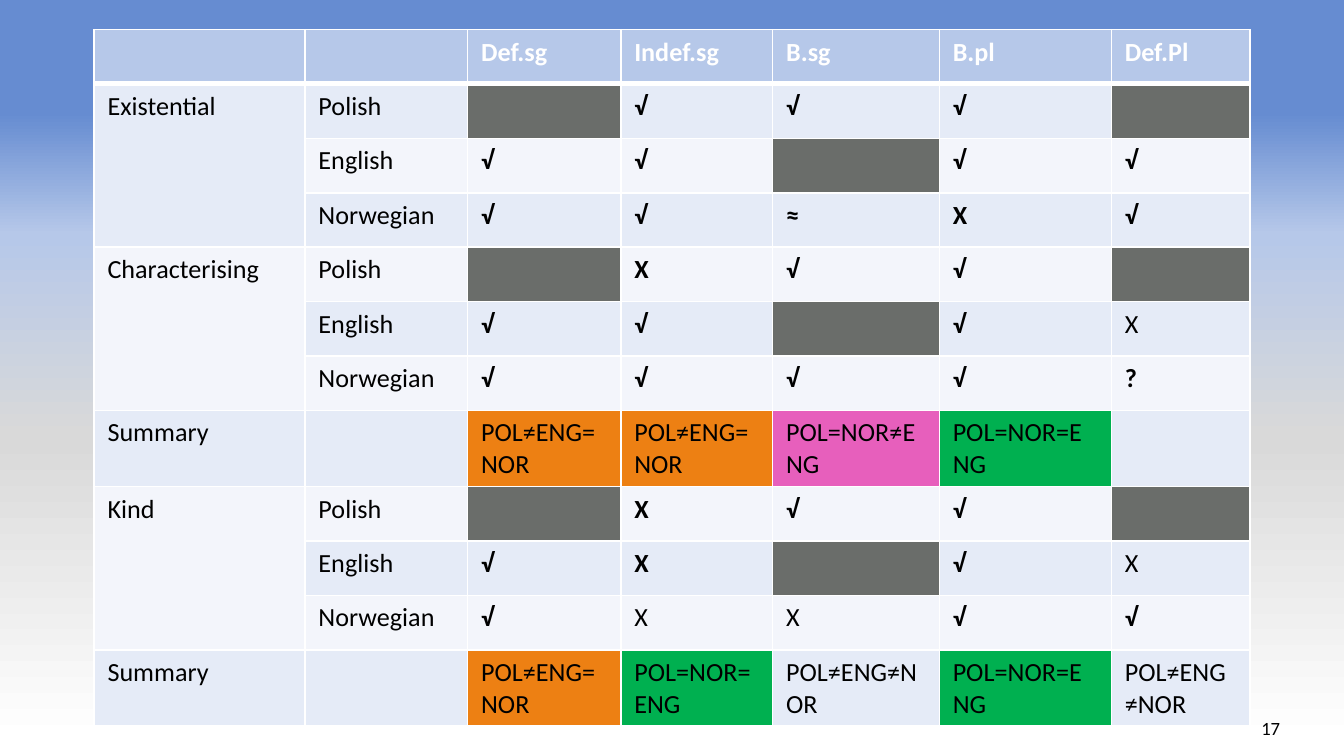
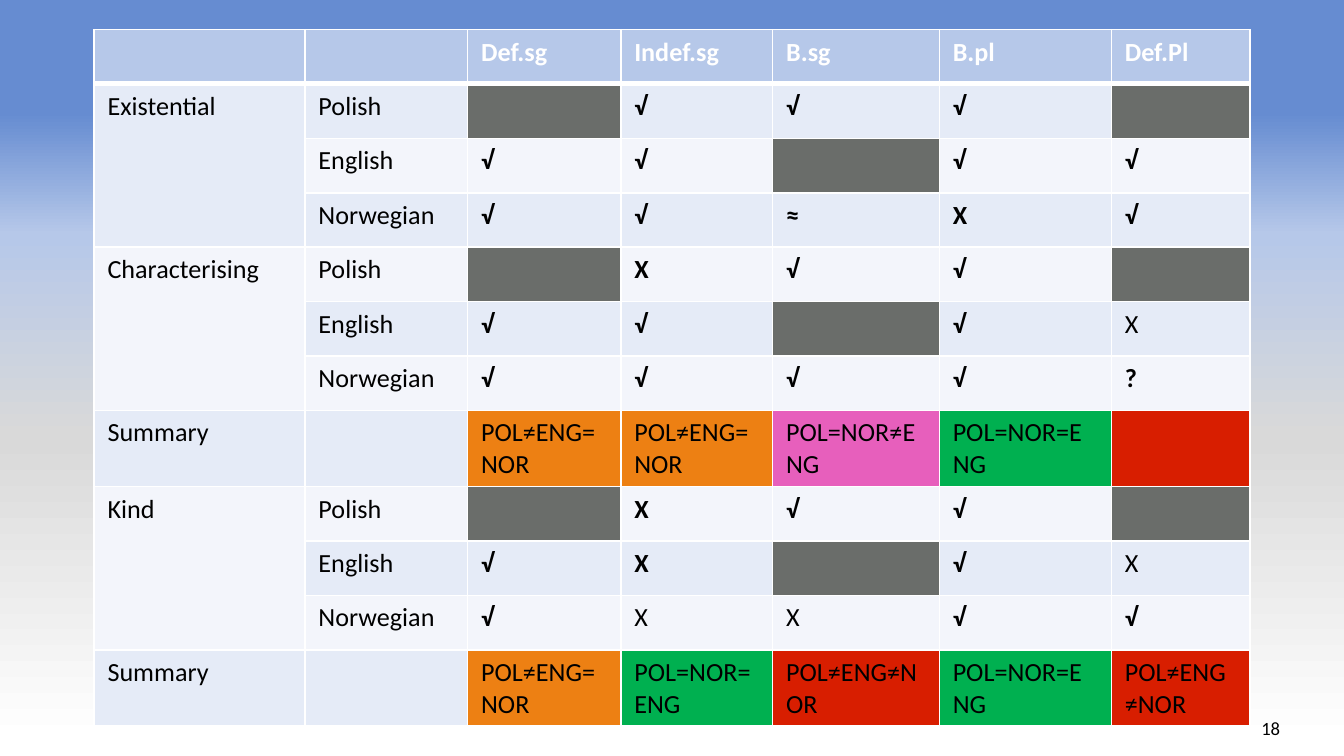
"""Builds two slides comparing noun phrase readings in Polish, English and Norwegian."""
import dataclasses

import lxml.etree
import pptx
import pptx.dml.color
import pptx.enum.text
import pptx.oxml.ns
import pptx.util

PX = pptx.util.Inches(1) // 200
qn = pptx.oxml.ns.qn


@dataclasses.dataclass(frozen=True)
class Theme:
    font: str = "Calibri"
    table_size: int = 14
    number_size: int = 10
    ink: str = "000000"
    white: str = "FFFFFF"
    header: str = "B6C8E9"
    bands: tuple = ("F3F5FB", "E5EBF7")
    blocked: str = "6A6D6A"
    orange: str = "ED8013"
    pink: str = "E75FBC"
    green: str = "00B050"
    red: str = "D81E00"
    backdrop: tuple = ((2, "FFFFFF"), (42, "D9D9D9"), (69, "B6C8E9"), (85, "668CD1"))
    thin: int = 1
    thick: int = 3


THEME = Theme()
BLOCKED = "-"
PLAIN_X = "x"
ALL_DIFFER = "POL≠ENG≠NOR"
VERDICT_FILLS = {
    "POL≠ENG=NOR": THEME.orange,
    "POL=NOR≠ENG": THEME.pink,
    "POL=NOR=ENG": THEME.green,
}
CONTRAST_FILLS = {ALL_DIFFER: THEME.red, "": THEME.red}
COLUMN_WIDTHS = (314, 242, 228, 226, 248, 256, 206)
ROW_HEIGHT = 81
HEADER = ("", "", "Def.sg", "Indef.sg", "B.sg", "B.pl", "Def.Pl")
LANGUAGES = ("Polish", "English", "Norwegian")
READINGS = (
    ("Existential", ("-√√√-", "√√-√√", "√√≈X√"), None),
    ("Characterising", ("-X√√-", "√√-√x", "√√√√?"),
     ("POL≠ENG=NOR", "POL≠ENG=NOR", "POL=NOR≠ENG", "POL=NOR=ENG", "")),
    ("Kind", ("-X√√-", "√X-√x", "√xx√√"),
     ("POL≠ENG=NOR", "POL=NOR=ENG", ALL_DIFFER, "POL=NOR=ENG", ALL_DIFFER)),
)


class SlideBuilder:
    def __init__(self, deck, theme):
        self.deck = deck
        self.theme = theme
        self.slide = None

    def add_slide(self):
        self.slide = self.deck.slides.add_slide(self.deck.slide_layouts[6])
        fill = self.slide.background.fill
        fill.gradient()
        fill.gradient_angle = 90
        stops = next(self.slide.element.iter(qn("a:gsLst")))
        for stop in list(stops):
            stops.remove(stop)
        for percent, color in self.theme.backdrop:
            stop = lxml.etree.SubElement(stops, qn("a:gs"), pos=str(percent * 1000))
            lxml.etree.SubElement(stop, qn("a:srgbClr"), val=color)

    def add_span(self, para, text, size, color, bold=False):
        span = para.add_run()
        span.text = text
        span.font.name = self.theme.font
        span.font.size = pptx.util.Pt(size)
        span.font.bold = bold
        span.font.color.rgb = pptx.dml.color.RGBColor.from_string(color)

    def page_number(self, number):
        box = self.slide.shapes.add_textbox(1854 * PX, 1054 * PX, 74 * PX, 60 * PX)
        frame = box.text_frame
        frame.word_wrap = True
        frame.margin_left = frame.margin_right = 0
        frame.vertical_anchor = pptx.enum.text.MSO_ANCHOR.MIDDLE
        para = frame.paragraphs[0]
        para.alignment = pptx.enum.text.PP_ALIGN.CENTER
        self.add_span(para, str(number), self.theme.number_size, self.theme.ink)

    def cell(self, cell, text, fill, color, bold=False, top=THEME.thin, bottom=THEME.thin):
        properties = cell._tc.get_or_add_tcPr()
        widths = {"L": self.theme.thin, "R": self.theme.thin, "T": top, "B": bottom}
        for side, width in widths.items():
            line = lxml.etree.SubElement(
                properties, qn(f"a:ln{side}"), w=str(pptx.util.Pt(width)))
            solid = lxml.etree.SubElement(line, qn("a:solidFill"))
            lxml.etree.SubElement(solid, qn("a:srgbClr"), val=self.theme.white)
        cell.fill.solid()
        cell.fill.fore_color.rgb = pptx.dml.color.RGBColor.from_string(fill)
        if text:
            para = cell.text_frame.paragraphs[0]
            self.add_span(para, text, self.theme.table_size, color, bold)

    def comparison(self, verdict_fills):
        row_count = 1 + sum(
            len(marks) + (verdicts is not None) for _, marks, verdicts in READINGS)
        frame = self.slide.shapes.add_table(
            row_count, len(HEADER), 140 * PX, 44 * PX, sum(COLUMN_WIDTHS) * PX,
            row_count * ROW_HEIGHT * PX)
        table = frame.table
        table.first_row = table.horz_banding = False
        for column, width in zip(table.columns, COLUMN_WIDTHS):
            column.width = width * PX
        for index, title in enumerate(HEADER):
            self.cell(table.cell(0, index), title, self.theme.header, self.theme.white,
                      bold=True, bottom=self.theme.thick)
        row = 1
        for reading, marks, verdicts in READINGS:
            last = row + len(marks) - 1
            for offset, (language, line) in enumerate(zip(LANGUAGES, marks)):
                self.marks_row(table, row + offset, reading if offset == 0 else "",
                               language, line)
            table.cell(row, 0).merge(table.cell(last, 0))
            row = last + 1
            if verdicts:
                self.summary_row(table, row, verdicts, verdict_fills)
                row += 1

    def marks_row(self, table, row, reading, language, marks):
        band = self.theme.bands[row % 2]
        top = self.theme.thick if row == 1 else self.theme.thin
        for column, label in enumerate((reading, language)):
            self.cell(table.cell(row, column), label, band, self.theme.ink, top=top)
        for column, mark in enumerate(marks, 2):
            blocked = mark == BLOCKED
            self.cell(table.cell(row, column), "" if blocked else mark.upper(),
                      self.theme.blocked if blocked else band, self.theme.ink,
                      bold=mark != PLAIN_X, top=top)

    def summary_row(self, table, row, verdicts, verdict_fills):
        band = self.theme.bands[row % 2]
        for column, label in enumerate(("Summary", "")):
            self.cell(table.cell(row, column), label, band, self.theme.ink)
        for column, verdict in enumerate(verdicts, 2):
            self.cell(table.cell(row, column), verdict,
                      verdict_fills.get(verdict, band), self.theme.ink)


def main():
    deck = pptx.Presentation()
    deck.slide_width = 2000 * PX
    deck.slide_height = 1125 * PX
    builder = SlideBuilder(deck, THEME)
    for number, fills in ((17, VERDICT_FILLS), (18, VERDICT_FILLS | CONTRAST_FILLS)):
        builder.add_slide()
        builder.page_number(number)
        builder.comparison(fills)
    deck.save("out.pptx")


if __name__ == "__main__":
    main()
